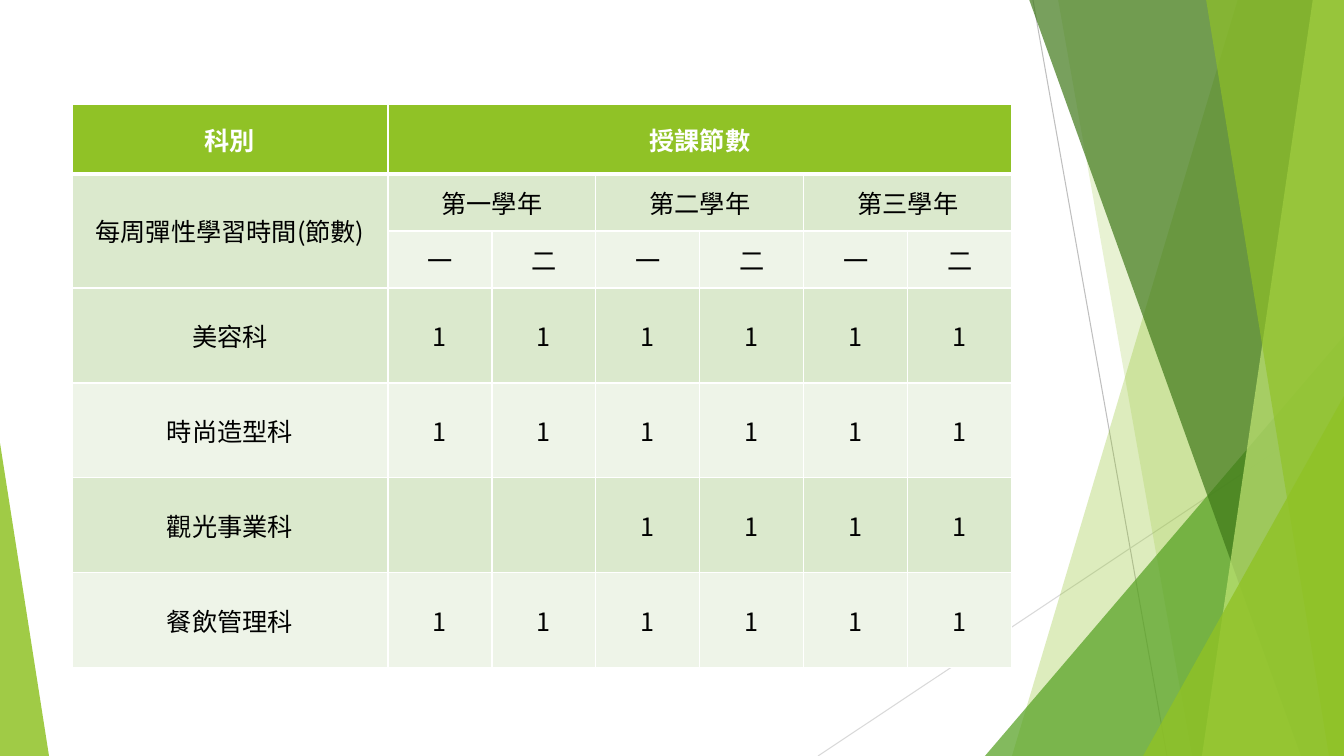
from lxml import etree
from pptx import Presentation
from pptx import util as u
from pptx.dml.color import RGBColor
from pptx.enum import shapes, text
from pptx.oxml.ns import qn

# Content: None marks a cell covered by a merge
ROWS = [
    ["科別", "授課節數"] + [None] * 5,
    ["每周彈性學習時間(節數)", "第一學年", None, "第二學年", None, "第三學年", None],
    [None] + ["一", "二"] * 3,
    ["美容科"] + ["1"] * 6,
    ["時尚造型科"] + ["1"] * 6,
    ["觀光事業科", "", ""] + ["1"] * 4,
    ["餐飲管理科"] + ["1"] * 6,
]
# First row, first column, last row, last column
MERGES = [(0, 1, 0, 6), (1, 0, 2, 0)] + [(1, c, 1, c + 1) for c in (1, 3, 5)]
COL_WIDTHS = [316] + [104] * 6
ROW_HEIGHTS = [70, 57, 57] + [95] * 4
TABLE_LEFT, TABLE_TOP = 72, 104

FONT = "Noto Sans CJK SC"
WHITE = RGBColor(0xFF, 0xFF, 0xFF)
BLACK = RGBColor(0, 0, 0)
GREEN = RGBColor(0x90, 0xC2, 0x26)
LEAF = RGBColor(0x54, 0xA0, 0x21)
FOREST = RGBColor(0x3F, 0x78, 0x19)
LIME = RGBColor(0xC0, 0xE4, 0x74)
BAND_DARK = RGBColor(0xDB, 0xE9, 0xCD)
BAND_LIGHT = RGBColor(0xEE, 0xF4, 0xE8)
GREY = RGBColor(0xBF, 0xBF, 0xBF)
PALE_GREY = RGBColor(0xD9, 0xD9, 0xD9)

WIDTH, HEIGHT = 1344, 756
# Start, end, colour
THIN_LINES = [((1033, 0), (1167, HEIGHT), GREY),
              ((WIDTH, 406), (818, HEIGHT), PALE_GREY)]
# Decoration from back to front
# facet: top x, bottom x; triangle: left, top, width, apex position
DECOR = [
    ("facet", (1238, 1012), GREEN, 30),
    ("facet", (1058, 1192), GREEN, 20),
    ("triangle", (985, 336, 359, 1), LEAF, 72),
    ("facet", (1029, 1301), FOREST, 70),
    ("facet", (1313, 1202), LIME, 70),
    ("facet", (1206, 1329), GREEN, 65),
    ("triangle", (1143, 396, 201, 1), GREEN, 80),
    ("triangle", (0, 443, 49, 0), GREEN, 85),
]


def px(n):
    return u.Emu(round(n * 914400 / 100.8))


def paint(sp, color, opacity):
    sp.shadow.inherit = False
    sp.fill.solid()
    sp.fill.fore_color.rgb = color
    sp.line.fill.background()
    clr = sp.fill._xPr.find(qn("a:solidFill"))[0]
    etree.SubElement(clr, qn("a:alpha"), val=str(opacity * 1000))


def set_borders(cell, bottom):
    tcPr = cell._tc.get_or_add_tcPr()
    for i, (side, points) in enumerate((("L", 1), ("R", 1), ("T", 1), ("B", bottom))):
        ln = etree.Element(qn(f"a:ln{side}"), w=str(u.Pt(points)))
        fill = etree.SubElement(ln, qn("a:solidFill"))
        etree.SubElement(fill, qn("a:srgbClr"), val=str(WHITE))
        tcPr.insert(i, ln)


prs = Presentation()
prs.slide_width, prs.slide_height = px(WIDTH), px(HEIGHT)
s = prs.slides.add_slide(prs.slide_layouts[6])

# Thin lines
for start, end, color in THIN_LINES:
    ln = s.shapes.add_connector(shapes.MSO_CONNECTOR.STRAIGHT,
                                *map(px, start), *map(px, end))
    ln.line.color.rgb = color
    ln.line.width = u.Pt(0.75)
    etree.SubElement(ln._element.spPr, qn("a:effectLst"))

# Green facets and triangles
for kind, place, color, opacity in DECOR:
    if kind == "facet":
        top_x, bottom_x = place
        fb = s.shapes.build_freeform(px(top_x), px(-1))
        fb.add_line_segments([(px(WIDTH), px(-1)), (px(WIDTH), px(HEIGHT)),
                              (px(bottom_x), px(HEIGHT))], close=True)
        sp = fb.convert_to_shape()
    else:
        left, top, width, apex = place
        sp = s.shapes.add_shape(shapes.MSO_SHAPE.ISOSCELES_TRIANGLE, px(left), px(top),
                                px(width), px(HEIGHT - top))
        sp.adjustments[0] = apex
    paint(sp, color, opacity)

# Table
tbl = s.shapes.add_table(len(ROWS), len(COL_WIDTHS), px(TABLE_LEFT), px(TABLE_TOP),
                         px(sum(COL_WIDTHS)), px(sum(ROW_HEIGHTS))).table
for col, width in zip(tbl.columns, COL_WIDTHS):
    col.width = px(width)
for row, height in zip(tbl.rows, ROW_HEIGHTS):
    row.height = px(height)
for r1, c1, r2, c2 in MERGES:
    tbl.cell(r1, c1).merge(tbl.cell(r2, c2))

for i, row in enumerate(ROWS):
    header = i == 0
    for j, value in enumerate(row):
        cell = tbl.cell(i, j)
        cell.fill.solid()
        cell.fill.fore_color.rgb = GREEN if header else BAND_DARK if i % 2 else BAND_LIGHT
        set_borders(cell, 3 if header else 1)
        if not value:
            continue
        cell.vertical_anchor = text.MSO_ANCHOR.MIDDLE
        if (i in (1, 2) and j > 0) or (i > 2 and j == 0):
            cell.margin_left = cell.margin_right = px(2)
            cell.margin_top = cell.margin_bottom = px(2)
        p = cell.text_frame.paragraphs[0]
        p.text = value
        p.alignment = text.PP_ALIGN.CENTER
        font = p.runs[0].font
        font.name, font.size, font.bold = FONT, u.Pt(18), header
        font.color.rgb = WHITE if header else BLACK
        etree.SubElement(font._element, qn("a:ea"), typeface=FONT)

prs.save("out.pptx")
